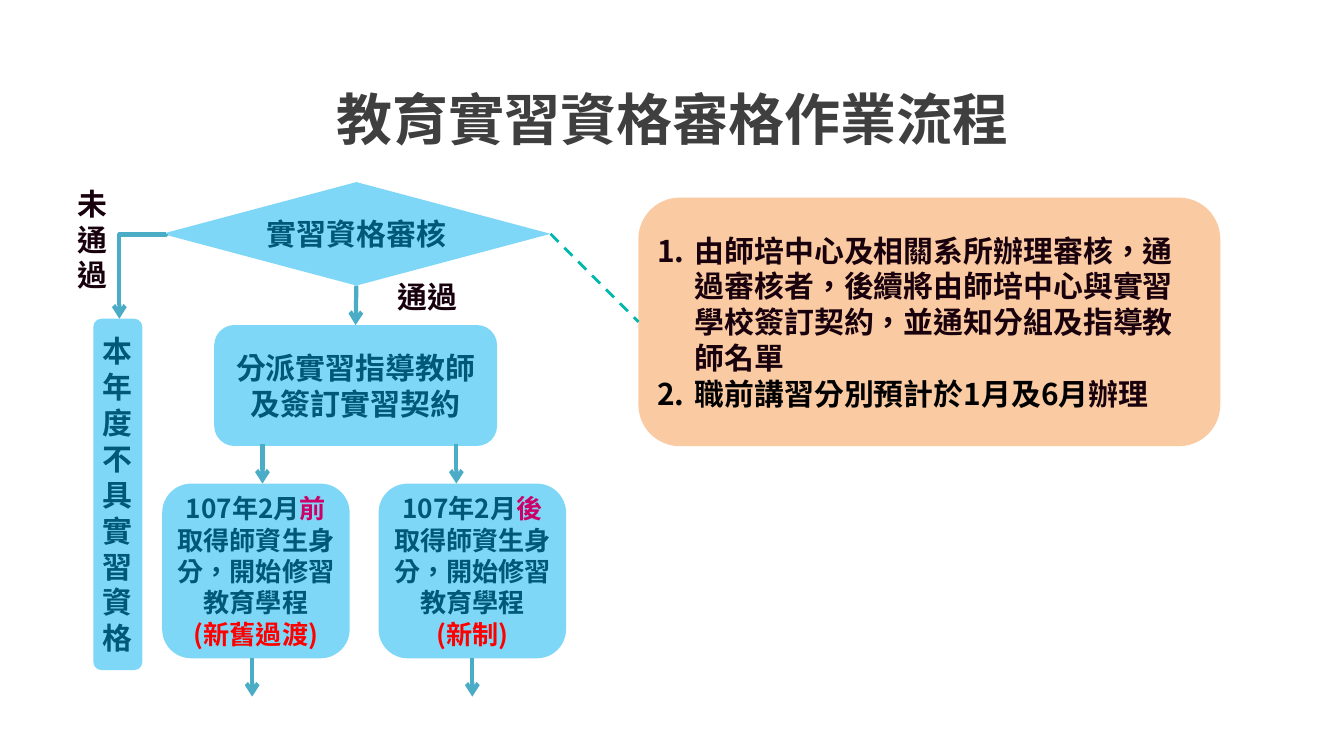
from dataclasses import dataclass

from lxml.etree import SubElement
from pptx import Presentation
from pptx.dml.color import RGBColor
from pptx.enum.dml import MSO_LINE_DASH_STYLE as Dash
from pptx.enum.shapes import MSO_CONNECTOR_TYPE as Link, MSO_SHAPE as Form
from pptx.enum.text import MSO_ANCHOR as Anchor, MSO_AUTO_SIZE as Fit, PP_ALIGN as Align
from pptx.oxml.ns import qn
from pptx.util import Inches, Pt

COLUMNS, ROWS = 20, 11.25
CELL = Inches(1)


@dataclass(frozen=True)
class Theme:
    font: str = "Noto Sans CJK SC"
    language: str = "zh-TW"
    heading: str = "3F3F3F"
    step: str = "00B0F0"
    note: str = "F79646"
    step_text: str = "005878"
    note_text: str = "18000D"
    black: str = "000000"
    stress: str = "CC0066"
    regime: str = "FF0000"
    arrow: str = "4BACC6"
    guide: str = "02B8AD"
    title_size: int = 60
    body_size: int = 32
    card_size: int = 28
    arrow_width: float = 4.5
    guide_width: float = 3
    opacity: int = 50


THEME = Theme()


@dataclass(frozen=True)
class Box:
    """A region in grid columns and rows."""
    left: float
    top: float
    width: float
    height: float

    def at(self, across, down):
        """Point at the given shares of the region."""
        return self.left + across * self.width, self.top + down * self.height

    def emu(self):
        return [round(n * CELL) for n in (self.left, self.top, self.width, self.height)]


def apply(target, formats):
    for name, value in formats.items():
        setattr(target, name, value)


def write(frame, paragraphs, size, align=Align.CENTER, numbered=False):
    """Fill a frame; each paragraph is a list of (words, colour) pairs."""
    frame.word_wrap = True
    for index, pieces in enumerate(paragraphs):
        paragraph = frame.paragraphs[0] if index == 0 else frame.add_paragraph()
        paragraph.alignment = align
        if numbered:
            props = paragraph._p.get_or_add_pPr()
            indent = Inches(0.56)
            props.set("marL", str(indent))
            props.set("indent", str(-indent))
            SubElement(props, qn("a:buFont"), typeface="+mj-lt")
            SubElement(props, qn("a:buAutoNum"), type="arabicPeriod")
        for words, colour in pieces:
            run = paragraph.add_run()
            run.text = words
            apply(run.font, {"size": Pt(size), "bold": True, "name": THEME.font})
            run.font.color.rgb = RGBColor.from_string(colour)
            run_props = run._r.get_or_add_rPr()
            run_props.set("lang", THEME.language)
            SubElement(run_props, qn("a:ea"), typeface=THEME.font)


def add_panel(slide, form, box, colour, paragraphs, size=THEME.body_size, **layout):
    panel = slide.shapes.add_shape(form, *box.emu())
    panel.shadow.inherit = False
    panel.line.fill.background()
    panel.fill.solid()
    panel.fill.fore_color.rgb = RGBColor.from_string(colour)
    tint = panel.fill._xPr.find(qn("a:solidFill"))[0]
    SubElement(tint, qn("a:alpha"), val=str(THEME.opacity * 1000))
    panel.text_frame.vertical_anchor = Anchor.MIDDLE
    write(panel.text_frame, paragraphs, size, **layout)
    return panel


def add_label(slide, box, words):
    frame = slide.shapes.add_textbox(*box.emu()).text_frame
    write(frame, [[(words, THEME.note_text)]], THEME.body_size, Align.LEFT)
    frame.auto_size = Fit.SHAPE_TO_FIT_TEXT


def add_link(slide, start, end, colour, width, kind=Link.STRAIGHT, arrow=True):
    link = slide.shapes.add_connector(kind, *[round(n * CELL) for n in (*start, *end)])
    link.line.color.rgb = RGBColor.from_string(colour)
    link.line.width = Pt(width)
    if arrow:
        SubElement(link.line._get_or_add_ln(), qn("a:tailEnd"), type="arrow")
    SubElement(link._element.spPr, qn("a:effectLst"))
    return link


def add_arrow(slide, start, end, **options):
    return add_link(slide, start, end, THEME.arrow, THEME.arrow_width, **options)


def add_elbow_arrow(slide, start, end):
    """Go left from start, then down to end: a bent connector turned a quarter."""
    (right, top), (left, bottom) = start, end
    middle_x, middle_y = (left + right) / 2, (top + bottom) / 2
    half_run, half_rise = (bottom - top) / 2, (right - left) / 2
    elbow = add_arrow(slide, (middle_x - half_run, middle_y - half_rise),
                      (middle_x + half_run, middle_y + half_rise), kind=Link.ELBOW)
    props = elbow._element.spPr
    props.find(qn("a:xfrm")).set("rot", "5400000")
    guides = props.find(qn("a:prstGeom")).get_or_add_avLst()
    SubElement(guides, qn("a:gd"), name="adj1", fmla="val 900")


def place_title(slide, box, words):
    title = slide.shapes.title
    apply(title, dict(zip(("left", "top", "width", "height"), box.emu())))
    frame = title.text_frame
    write(frame, [[(words, THEME.heading)]], THEME.title_size)
    apply(frame, {"vertical_anchor": Anchor.MIDDLE, "auto_size": Fit.NONE,
                  "margin_left": Inches(0.18), "margin_right": Inches(0.18),
                  "margin_top": Inches(0.09), "margin_bottom": Inches(0.09)})


def place_branch(slide, box, stress, regime, arrow_in, arrow_out):
    """A student group with its arrows at the given shares of the width."""
    card = add_panel(slide, Form.ROUNDED_RECTANGLE, box, THEME.step, [
        [("107年2月", THEME.step_text), (stress, THEME.stress),
         ("取得師資生身分，開始修習教育學程", THEME.step_text)],
        [(regime, THEME.regime)],
    ], THEME.card_size)
    reach = 0.59
    x, top = box.at(arrow_in, 0)
    add_arrow(slide, (x, top - reach), (x, top))
    x, bottom = box.at(arrow_out, 1)
    onward = add_arrow(slide, (x, bottom), (x, bottom + reach - 0.02))
    if arrow_out == 0.5:
        onward.begin_connect(card, 2)


def place_flow(slide, box):
    """The review and its outcomes; returns the review and its right corner."""
    review_box = Box(*box.at(0.185, 0), 5.78, 1.54)
    assign_box = Box(*box.at(0.29, 0.293), 4.21, 1.8)
    reject_box = Box(*box.at(0.046, 0.28), 0.73, 5.23)

    assign = add_panel(slide, Form.ROUNDED_RECTANGLE, assign_box, THEME.step,
                       [[("分派實習指導教師及簽訂實習契約", THEME.step_text)]])
    review = add_panel(slide, Form.FLOWCHART_DECISION, review_box, THEME.step,
                       [[("實習資格審核", THEME.step_text)]])
    add_panel(slide, Form.ROUNDED_RECTANGLE, reject_box, THEME.step,
              [[("本年度不具實習資格", THEME.step_text)]])
    add_label(slide, Box(*box.at(0.647, 0.191), 1.27, 0.64), "通過")
    add_label(slide, Box(*box.at(0, 0), 0.6, 1.72), "未通過")

    add_elbow_arrow(slide, review_box.at(0.01, 0.5), reject_box.at(0.53, 0))
    passed = add_arrow(slide, review_box.at(0.5, 1), assign_box.at(0.5, 0))
    passed.begin_connect(review, 2)
    passed.end_connect(assign, 0)

    branches = [("前", "(新舊過渡)", 0.535, 0.48), ("後", "(新制)", 0.415, 0.5)]
    for column, branch in enumerate(branches):
        left, top = box.at(0.185, 0.618)
        place_branch(slide, Box(left + column * 3.22, top, 2.79, 2.6), *branch)
    return review, review_box.at(1, 0.5)


def place_note(slide, box, review, corner):
    note = add_panel(slide, Form.ROUNDED_RECTANGLE, box, THEME.note, [
        [("由師培中心及相關系所辦理審核，通過審核者，後續將由師培中心與實習學校簽訂契約，"
          "並通知分組及指導教師名單", THEME.note_text)],
        [("職前講習分別預計於1月及6月", THEME.black), ("辦理", THEME.note_text)],
    ], align=Align.LEFT, numbered=True)
    guide = add_link(slide, corner, box.at(0, 0.5), THEME.guide, THEME.guide_width, arrow=False)
    guide.line.dash_style = Dash.DASH
    guide.begin_connect(review, 3)
    guide.end_connect(note, 1)


def main():
    deck = Presentation()
    apply(deck, {"slide_width": COLUMNS * CELL, "slide_height": round(ROWS * CELL)})
    slide = deck.slides.add_slide(deck.slide_layouts[5])
    place_title(slide, Box(0, 1.22, COLUMNS, 1.08), "教育實習資格審格作業流程")
    review, corner = place_flow(slide, Box(1.05, 2.71, 7.37, 7.26))
    place_note(slide, Box(9.5, 2.94, 8.66, 3.7), review, corner)
    deck.save("out.pptx")


if __name__ == "__main__":
    main()
